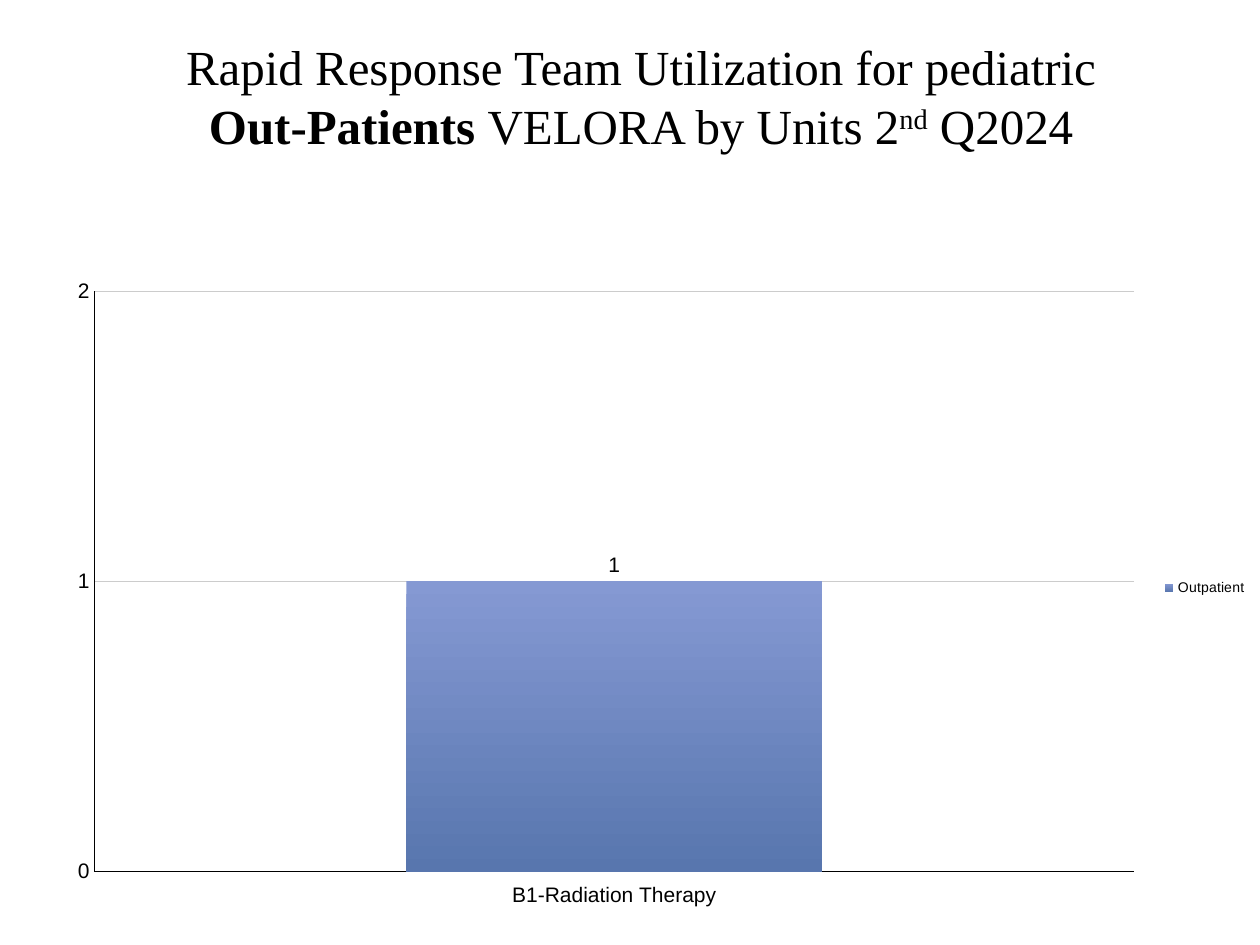
import dataclasses
from typing import Any

import lxml.etree
import pptx
import pptx.chart.data
import pptx.dml.color
import pptx.enum.chart
import pptx.enum.text
import pptx.oxml.ns
import pptx.util

Cm = pptx.util.Cm
Pt = pptx.util.Pt
INK = "000000"


@dataclasses.dataclass
class Run:
    text: str
    bold: bool = False
    raised: bool = False


@dataclasses.dataclass
class Box:
    left: float
    top: float
    width: float
    height: float

    def place(self) -> tuple:
        return Cm(self.left), Cm(self.top), Cm(self.width), Cm(self.height)


def color(code: str) -> pptx.dml.color.RGBColor:
    return pptx.dml.color.RGBColor.from_string(code)


def style(font: Any, size: float, face: str, code: str = INK) -> None:
    font.size = Pt(size)
    font.name = face
    font.color.rgb = color(code)


def write(slide: Any, lines: list[list[Run]], *, box: Box, size: float,
          face: str, foot: float) -> None:
    frame = slide.shapes.add_textbox(*box.place()).text_frame
    frame.word_wrap = True
    frame.vertical_anchor = pptx.enum.text.MSO_ANCHOR.MIDDLE
    frame.margin_bottom = Cm(foot)
    para = frame.paragraphs[0]
    para.alignment = pptx.enum.text.PP_ALIGN.CENTER
    for index, line in enumerate(lines):
        if index:
            para.add_line_break()
        for part in line:
            run = para.add_run()
            run.text = part.text
            style(run.font, size, face)
            run.font.bold = part.bold
            if part.raised:
                run.font._element.set("baseline", "30000")


def set_axis(axis: Any) -> None:
    axis.has_title = False
    axis.major_tick_mark = pptx.enum.chart.XL_TICK_MARK.NONE
    axis.minor_tick_mark = pptx.enum.chart.XL_TICK_MARK.NONE
    axis.format.line.color.rgb = color(INK)
    axis.format.line.width = Pt(0)
    style(axis.tick_labels.font, 12, "Arial")


def set_plot(chart: Any, **sides: float) -> None:
    area = chart._chartSpace.chart.plotArea
    name = pptx.oxml.ns.qn
    for old in area.findall(name("c:layout")):
        area.remove(old)
    layout = lxml.etree.Element(name("c:layout"))
    area.insert(0, layout)
    manual = lxml.etree.SubElement(layout, name("c:manualLayout"))
    rules = {"layoutTarget": "inner", "xMode": "edge", "yMode": "edge", **sides}
    for tag, value in rules.items():
        lxml.etree.SubElement(manual, name("c:" + tag)).set("val", str(value))


def draw_chart(slide: Any, box: Box) -> None:
    data = pptx.chart.data.CategoryChartData(number_format="#0")
    data.categories = ["B1-Radiation Therapy"]
    data.add_series("Outpatient", [1])
    kind = pptx.enum.chart.XL_CHART_TYPE.COLUMN_CLUSTERED
    chart = slide.shapes.add_chart(kind, *box.place(), data).chart
    chart.has_title = False
    style(chart.font, 10, "Calibri")
    set_plot(chart, x=0.064, y=0.103, w=0.835, h=0.777)

    chart.has_legend = True
    chart.legend.position = pptx.enum.chart.XL_LEGEND_POSITION.RIGHT
    chart.legend.include_in_layout = False
    style(chart.legend.font, 8, "Arial")

    base = chart.category_axis
    set_axis(base)
    base.tick_label_position = pptx.enum.chart.XL_TICK_LABEL_POSITION.LOW
    scale = chart.value_axis
    set_axis(scale)
    scale.minimum_scale, scale.maximum_scale, scale.major_unit = 0, 2, 1
    scale.tick_labels.number_format = "#0"
    scale.tick_labels.number_format_is_linked = False
    grid = scale.major_gridlines.format.line
    grid.color.rgb = color("CCCCCC")
    grid.width = Pt(0)

    plot = chart.plots[0]
    plot.gap_width = 150
    plot.vary_by_categories = False
    bars = plot.series[0]
    fill = bars.format.fill
    fill.gradient()
    fill.gradient_angle = 270
    for stop, code, spot in zip(fill.gradient_stops, ("8599D3", "5876AE"), (0, 1)):
        stop.color.rgb = color(code)
        stop.position = spot
    bars.format.line.fill.background()

    labels = bars.data_labels
    labels.show_value = True
    labels.position = pptx.enum.chart.XL_LABEL_POSITION.OUTSIDE_END
    labels.number_format = "#0"
    labels.number_format_is_linked = False
    style(labels.font, 12, "Arial")


def main() -> None:
    deck = pptx.Presentation()
    deck.slide_width, deck.slide_height = Cm(25.4), Cm(19.05)
    slide = deck.slides.add_slide(deck.slide_layouts[6])
    title = [
        [Run("Rapid Response Team Utilization for pediatric")],
        [Run("Out-Patients ", bold=True), Run("VELORA by Units 2"),
         Run("nd", raised=True), Run(" Q2024")],
    ]
    write(slide, title, box=Box(0.48, 0.74, 24.89, 3.61), size=28,
          face="Times New Roman", foot=1.37)
    draw_chart(slide, Box(0.3, 4.32, 25.1, 15.06))
    deck.save("out.pptx")


if __name__ == "__main__":
    main()
